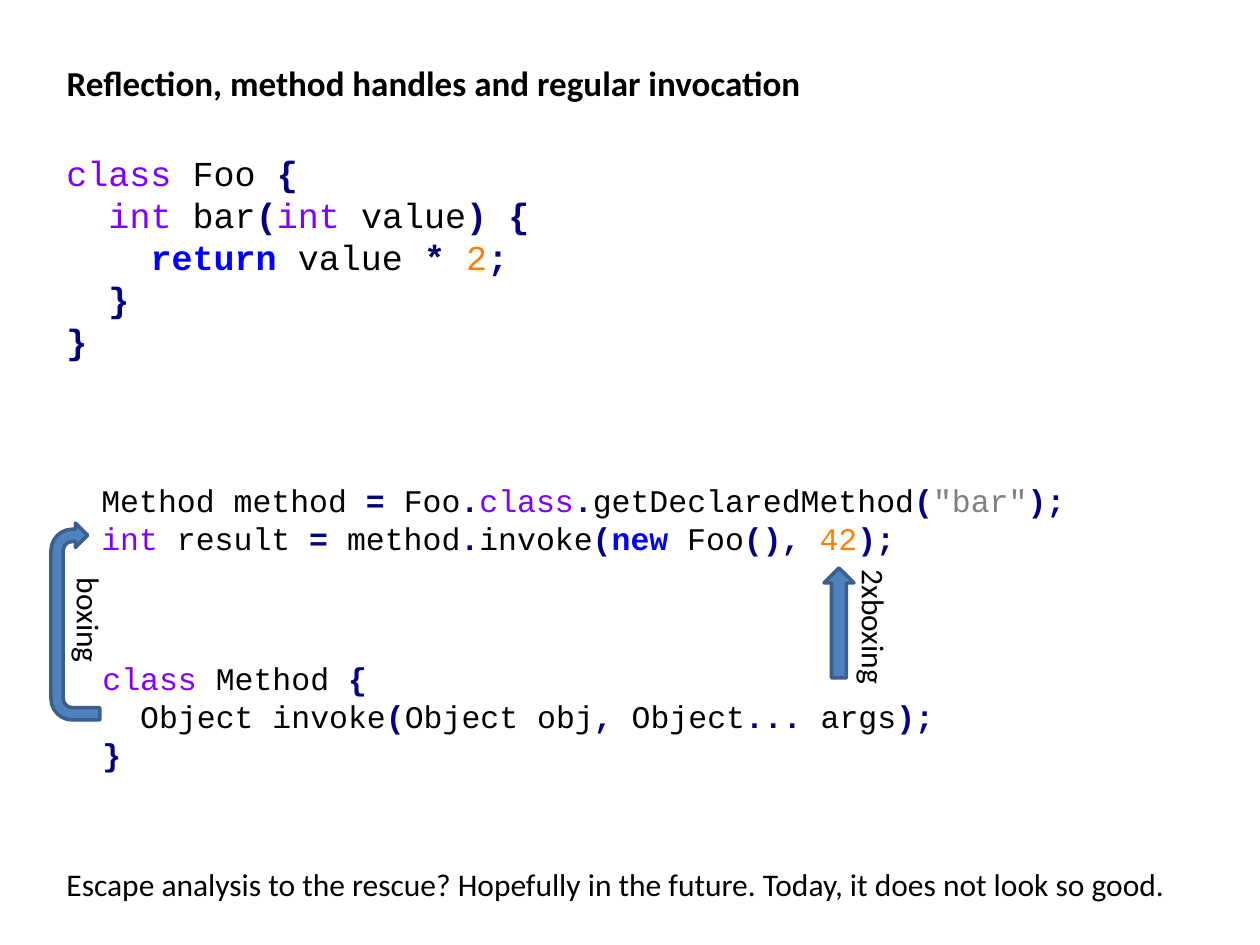
from dataclasses import dataclass
from itertools import groupby

from pptx import Presentation
from pptx.dml.color import RGBColor as Rgb
from pptx.enum.shapes import MSO_SHAPE as Kind
from pptx.enum.text import MSO_ANCHOR as Anchor, MSO_AUTO_SIZE as Fit, PP_ALIGN as Align
from pptx.util import Emu, Inches, Pt

BLACK = Rgb(0x00, 0x00, 0x00)
NAVY = Rgb(0x00, 0x00, 0x80)
PURPLE = Rgb(0x80, 0x00, 0xFF)
BLUE = Rgb(0x00, 0x00, 0xFF)
ORANGE = Rgb(0xFF, 0x80, 0x00)
GREY = Rgb(0x80, 0x80, 0x80)
STEEL = Rgb(0x4F, 0x81, 0xBD)
EDGE = Rgb(0x3A, 0x5F, 0x8C)

SANS, MONO = "Calibri", "Courier New"
SCALE = 914400 / 126  # EMU per px


@dataclass
class Box:
    x: int
    y: int
    w: int
    h: int
    turn: int = 0


@dataclass
class Code:
    box: Box
    size: int
    lines: list[str]


@dataclass
class Label:
    box: Box
    text: str


@dataclass
class Arrow:
    box: Box
    kind: Kind


CODES = [
    Code(Box(54, 145, 1206, 267), 20, [
        "class Foo {",
        "  int bar(int value) {",
        "    return value * 2;",
        "  }",
        "}",
    ]),
    Code(Box(89, 475, 1109, 89), 18, [
        'Method method = Foo.class.getDeclaredMethod("bar");',
        "int result = method.invoke(new Foo(), 42);",
    ]),
    Code(Box(90, 653, 992, 127), 18, [
        "class Method {",
        "  Object invoke(Object obj, Object... args);",
        "}",
    ]),
]
ARROWS = [
    Arrow(Box(-23, 597, 197, 49, 270), Kind.U_TURN_ARROW),
    Arrow(Box(824, 568, 30, 110), Kind.UP_ARROW),
]
LABELS = [
    Label(Box(34, 596, 111, 50, 90), "boxing"),
    Label(Box(804, 603, 141, 50, 90), "2xboxing"),
    Label(Box(54, 859, 1129, 50),
          "Escape analysis to the rescue? Hopefully in the future. Today, it does not look so good."),
]


def px(n: int) -> Emu:
    return Emu(round(n * SCALE))


def place(shape, box: Box) -> None:
    shape.left, shape.top = px(box.x), px(box.y)
    shape.width, shape.height = px(box.w), px(box.h)
    shape.rotation = box.turn


def style(word: str) -> tuple[Rgb, bool]:
    """Colour and weight of one code token."""
    if word in ("class", "int"):
        return PURPLE, False
    if word in ("return", "new"):
        return BLUE, True
    if word.isdigit():
        return ORANGE, False
    if word.startswith('"'):
        return GREY, False
    return (BLACK, False) if word.isalnum() else (NAVY, True)


def tokens(line: str) -> list[tuple[str, Rgb, bool]]:
    """Split a line into runs; a space joins the token before it."""
    runs = []
    for _, chars in groupby(line, lambda c: "gap" if c == " " else c.isalnum() or c == '"'):
        word = "".join(chars)
        if word.isspace():
            if runs:
                runs[-1] = (runs[-1][0] + word, *runs[-1][1:])
            else:
                runs.append((word, BLACK, False))
        else:
            runs.append((word, *style(word)))
    return [("".join(r[0] for r in same), *key)
            for key, same in groupby(runs, lambda r: r[1:])]


def write(para, text: str, *, size: int = 18, font: str = SANS,
          color: Rgb = BLACK, bold: bool = False) -> None:
    run = para.add_run()
    run.text = text
    run.font.size, run.font.name, run.font.bold = Pt(size), font, bold
    run.font.color.rgb = color


def frame(shape, box: Box, wrap: bool = False):
    """Place a text shape and return its prepared text frame."""
    place(shape, box)
    body = shape.text_frame
    body.word_wrap, body.auto_size = wrap, Fit.SHAPE_TO_FIT_TEXT
    body.vertical_anchor = Anchor.TOP
    body.paragraphs[0].alignment = Align.LEFT
    return body


def new_box(slide):
    return slide.shapes.add_textbox(0, 0, 0, 0)


def draw_code(slide, code: Code) -> None:
    body = frame(new_box(slide), code.box, wrap=True)
    for i, line in enumerate(code.lines):
        para = body.add_paragraph() if i else body.paragraphs[0]
        for text, color, bold in tokens(line):
            write(para, text, size=code.size, font=MONO, color=color, bold=bold)


def draw_label(slide, label: Label) -> None:
    write(frame(new_box(slide), label.box).paragraphs[0], label.text)


def draw_arrow(slide, arrow: Arrow) -> None:
    shape = slide.shapes.add_shape(arrow.kind, 0, 0, 0, 0)
    place(shape, arrow.box)
    shape.shadow.inherit = False
    shape.fill.solid()
    shape.fill.fore_color.rgb = STEEL
    shape.line.color.rgb = EDGE
    shape.line.width = Pt(2)


def main() -> None:
    deck = Presentation()
    deck.slide_width, deck.slide_height = Inches(10), Inches(7.5)
    slide = deck.slides.add_slide(deck.slide_layouts[5])  # title only

    # Title
    title = frame(slide.shapes.title, Box(54, 55, 766, 55))
    write(title.paragraphs[0], "Reflection, method handles and regular invocation",
          size=20, bold=True)

    # Code listings, boxing arrows, captions
    for code in CODES:
        draw_code(slide, code)
    for arrow in ARROWS:
        draw_arrow(slide, arrow)
    for label in LABELS:
        draw_label(slide, label)

    deck.save("out.pptx")


if __name__ == "__main__":
    main()
